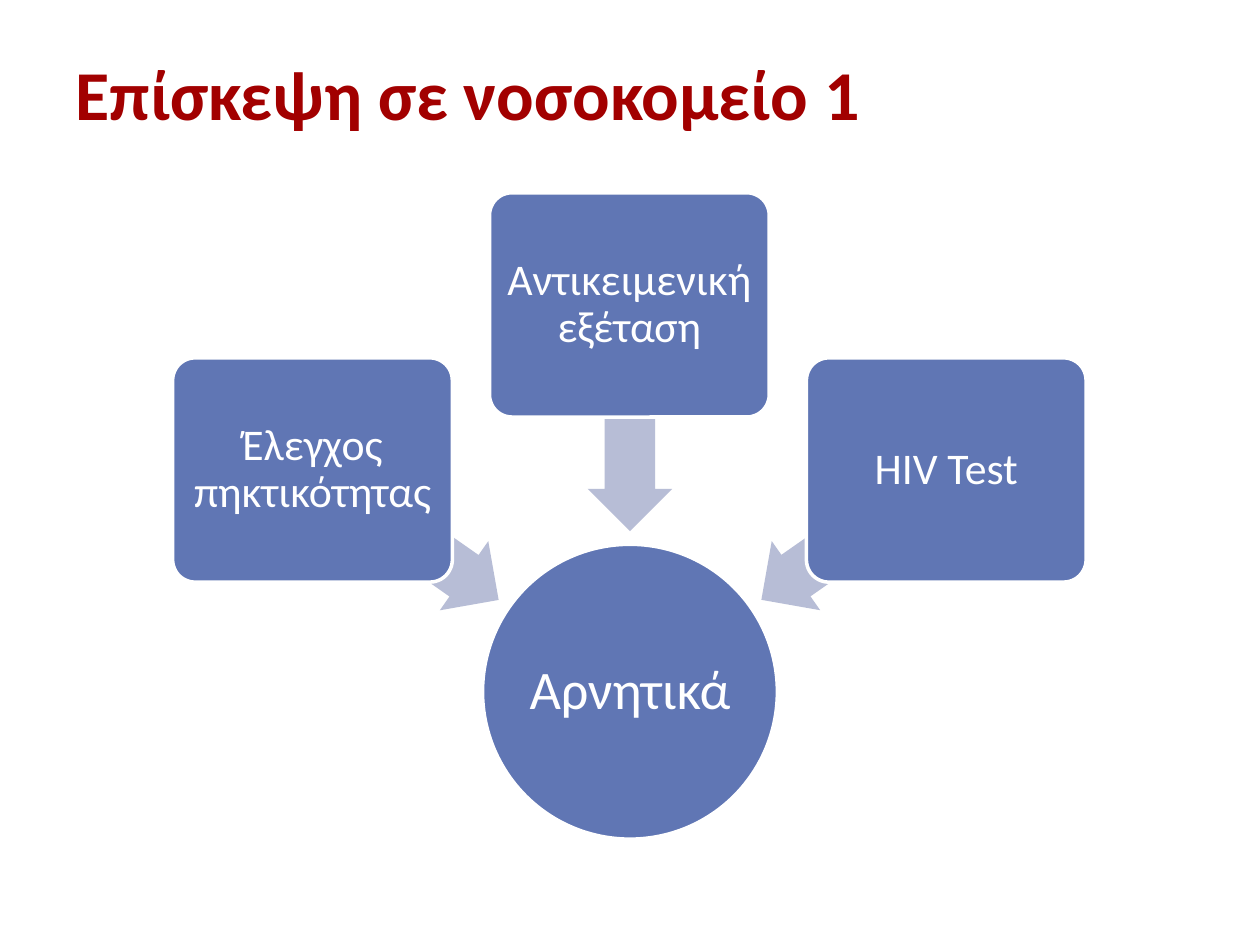
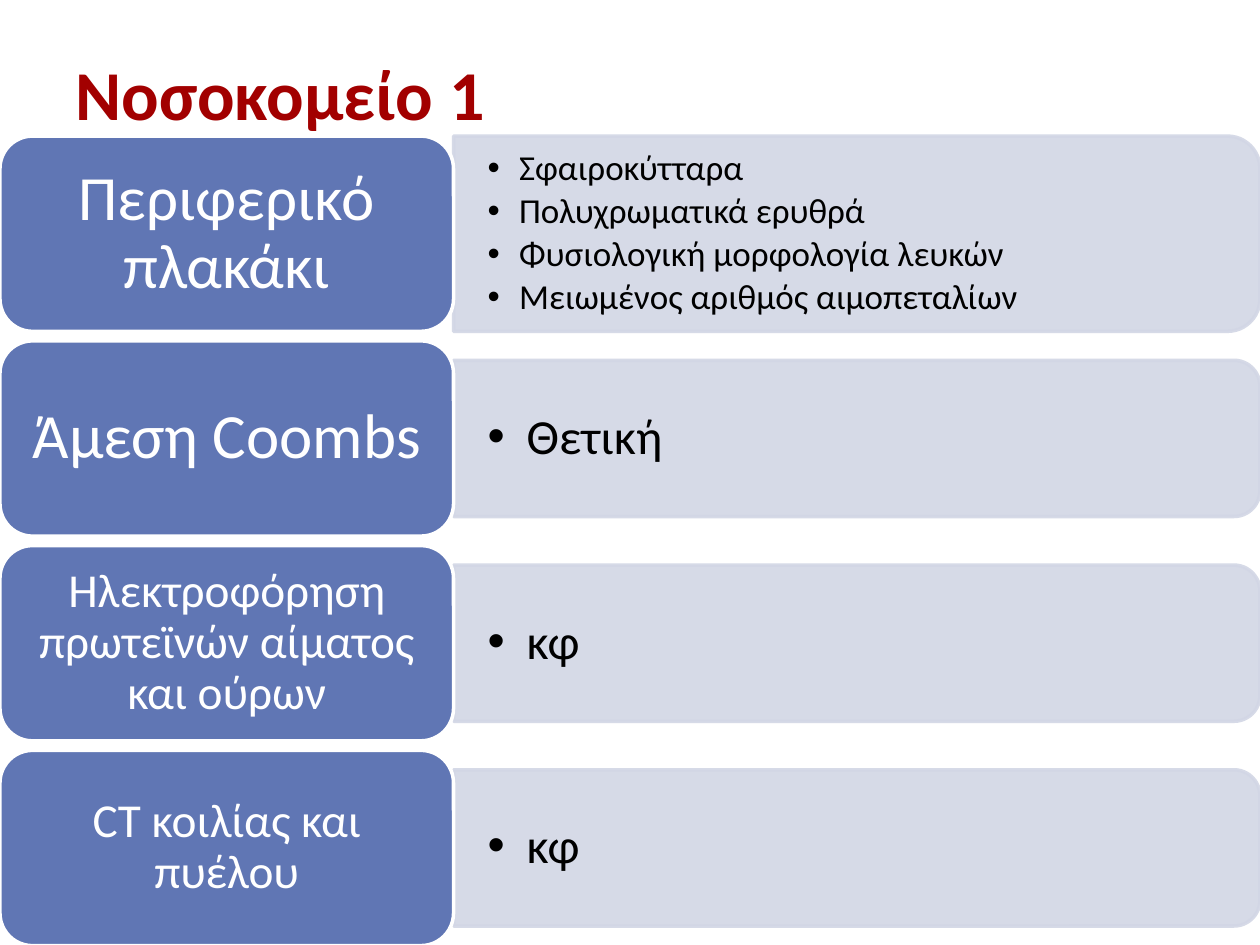
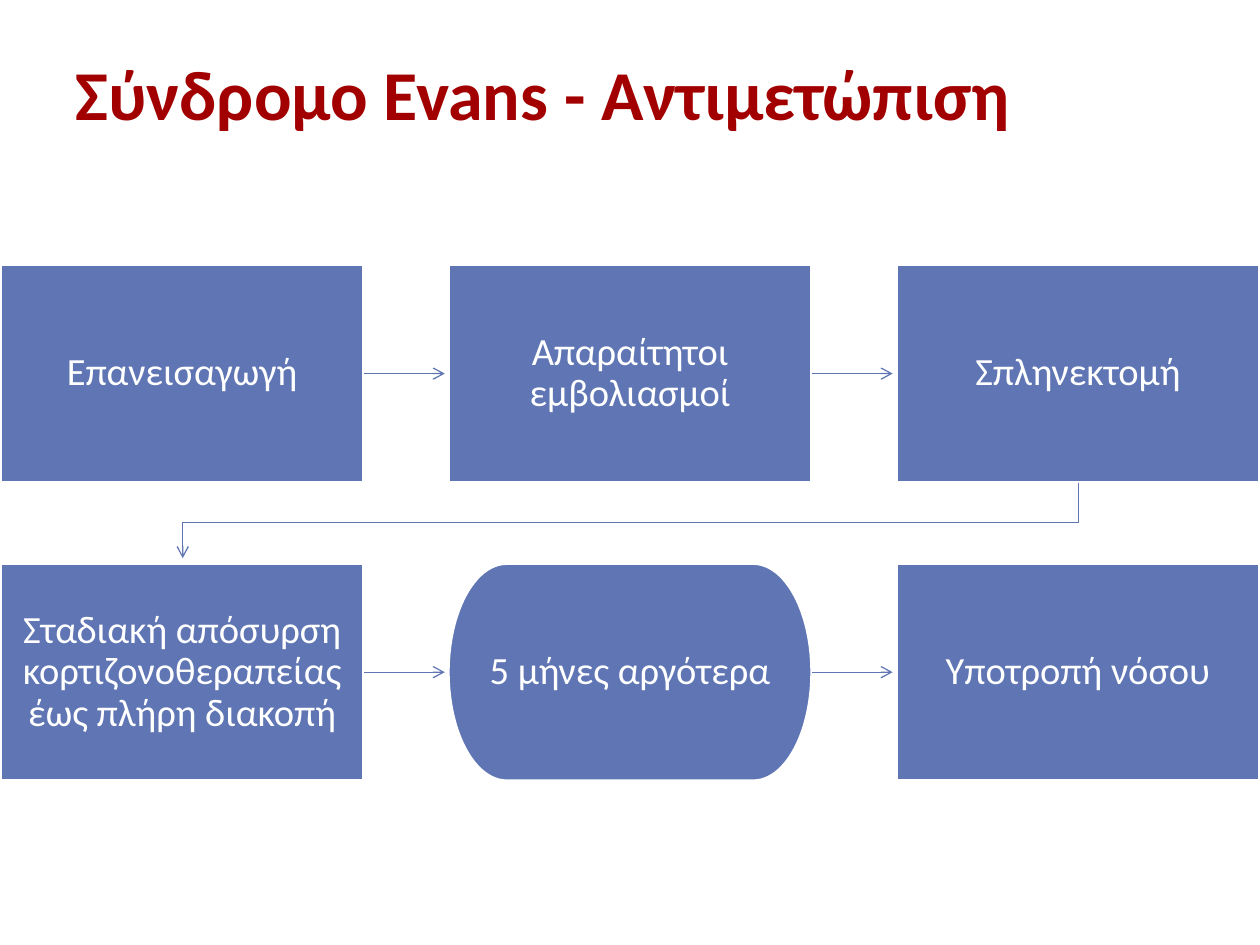
from lxml import etree
from pptx import Presentation
from pptx.dml.color import RGBColor
from pptx.enum.shapes import MSO_CONNECTOR, MSO_SHAPE
from pptx.enum.text import MSO_ANCHOR, MSO_AUTO_SIZE, PP_ALIGN
from pptx.oxml.ns import qn
from pptx.util import Inches, Pt

RECTANGLE = MSO_SHAPE.RECTANGLE
ROUNDED = MSO_SHAPE.ROUNDED_RECTANGLE
TERMINATOR = MSO_SHAPE.FLOWCHART_TERMINATOR
OVAL = MSO_SHAPE.OVAL
LEFT_ARROW = MSO_SHAPE.LEFT_ARROW
TOP_ROUNDED = MSO_SHAPE.ROUND_2_SAME_RECTANGLE
STRAIGHT = MSO_CONNECTOR.STRAIGHT
MIDDLE = MSO_ANCHOR.MIDDLE
NO_AUTOFIT = MSO_AUTO_SIZE.NONE
LEFT, CENTER = PP_ALIGN.LEFT, PP_ALIGN.CENTER

THEME = {
    "node": RGBColor(0x60, 0x76, 0xB4),
    "arrow": RGBColor(0xB7, 0xBD, 0xD6),
    "panel": RGBColor(0xD2, 0xD6, 0xE5),
    "white": RGBColor(0xFF, 0xFF, 0xFF),
    "outline": Pt(2),
    "connector": Pt(0.75),
    "title": {"name": "Calibri", "size": Pt(40), "bold": True,
              "color": RGBColor(0xA2, 0x00, 0x00)},
    "label": {"name": "Calibri", "color": RGBColor(0xFF, 0xFF, 0xFF)},
    "list": {"name": "Calibri", "bold": False, "color": RGBColor(0, 0, 0)},
    "conclusion_size": 31, "test_size": 25, "step_size": 22,
}
TITLE_ONLY, FOUR_BODIES = 5, 4


def write_text(shape, lines, font_format, align, margins, indent=0):
    """Fill a shape or placeholder; an indent makes the lines bullets."""
    frame = shape.text_frame
    horizontal, vertical = (Inches(margin) for margin in margins)
    frame_format = {"word_wrap": True, "auto_size": NO_AUTOFIT, "vertical_anchor": MIDDLE,
                    "margin_left": horizontal, "margin_right": horizontal,
                    "margin_top": vertical, "margin_bottom": vertical}
    for name, value in frame_format.items():
        setattr(frame, name, value)
    frame.text = "\n".join(lines)
    for paragraph in frame.paragraphs:
        paragraph.alignment = align
        paragraph.line_spacing = 0.9
        paragraph.space_before = Pt(0)
        if indent:
            paragraph.space_after = Pt(3)
            properties = paragraph._p.get_or_add_pPr()
            properties.set("marL", str(Inches(indent)))
            properties.set("indent", str(-Inches(indent)))
            etree.SubElement(properties, qn("a:buChar"), char="•")
        for name, value in font_format.items():
            if name == "color":
                paragraph.font.color.rgb = value
            else:
                setattr(paragraph.font, name, value)


def add_block(slide, kind, box, fill, outline=None, adjustments=()):
    """Add a filled preset shape, outlined if a colour is given."""
    shape = slide.shapes.add_shape(kind, *(Inches(length) for length in box))
    shape.shadow.inherit = False
    shape.fill.solid()
    shape.fill.fore_color.rgb = fill
    if outline is None:
        shape.line.fill.background()
    else:
        shape.line.color.rgb = outline
        shape.line.width = THEME["outline"]
    for index, value in enumerate(adjustments):
        shape.adjustments[index] = value
    return shape


presentation = Presentation()
presentation.slide_width, presentation.slide_height = Inches(10), Inches(7.5)

# Slides and their titles
slides = []
for title_text, layout in [("Επίσκεψη σε νοσοκομείο 1", TITLE_ONLY),
                           ("Νοσοκομείο 1", FOUR_BODIES),
                           ("Σύνδρομο Evans - Αντιμετώπιση", TITLE_ONLY)]:
    slide = presentation.slides.add_slide(presentation.slide_layouts[layout])
    title = slide.shapes.title
    title.left, title.top = Inches(0.5), Inches(0.3)
    title.width, title.height = Inches(9), Inches(0.87)
    write_text(title, [title_text], THEME["title"], LEFT, (0.1, 0.05))
    title.text_frame.paragraphs[0].line_spacing = 1.0
    slides.append(slide)
visit_slide, results_slide, treatment_slide = slides

# Visit: three tests lead to one conclusion
conclusion = add_block(visit_slide, OVAL, (3.83, 4.32, 2.34, 2.34), THEME["node"], THEME["white"])
write_text(conclusion, ["Αρνητικά"], {**THEME["label"], "size": Pt(THEME["conclusion_size"])},
           CENTER, (0.02, 0.02))
tests = [("Έλεγχος πηκτικότητας", 2.84, 3.91),
         ("Αντικειμενική εξέταση", 1.53, 2.98),
         ("HIV Test", 2.84, 3.91)]
for index, (test, box_top, arrow_top) in enumerate(tests):
    arrow = add_block(visit_slide, LEFT_ARROW, (2.32 + 1.78 * index, arrow_top, 1.8, 0.67),
                      THEME["arrow"], adjustments=(0.6, 0.5))
    arrow.rotation = 215 + 55 * index
    box = add_block(visit_slide, ROUNDED, (1.37 + 2.515 * index, box_top, 2.22, 1.78),
                    THEME["node"], THEME["white"], (0.1,))
    write_text(box, [test], {**THEME["label"], "size": Pt(THEME["test_size"])},
               CENTER, (0.05, 0.05))

# Results: an examination on the left, its findings on the right
results = [
    ("Περιφερικό πλακάκι", 36, (0.15, 0.07),
     ["Σφαιροκύτταρα", "Πολυχρωματικά ερυθρά", "Φυσιολογική μορφολογία λευκών",
      "Μειωμένος αριθμός αιμοπεταλίων"], 20, 0.25, 1.55),
    ("Άμεση Coombs", 36, (0.15, 0.07), ["Θετική"], 28, 0.31, 1.24),
    ("Ηλεκτροφόρηση πρωτεϊνών αίματος και ούρων", 27, (0.11, 0.06), ["κφ"], 28, 0.31, 1.24),
    ("CT κοιλίας και πυέλου", 27, (0.11, 0.06), ["κφ"], 28, 0.31, 1.24),
]
card_width, card_height, panel_width = 3.6, 1.55, 6.4
for index, (examination, label_size, margins, findings, list_size, indent,
            panel_height) in enumerate(results):
    card_top = 1.08 + 1.625 * index
    middle = card_top + card_height / 2

    # The panel is turned so that its rounded corners face right
    panel = add_block(results_slide, TOP_ROUNDED,
                      (card_width + (panel_width - panel_height) / 2, middle - panel_width / 2,
                       panel_height, panel_width), THEME["panel"], THEME["panel"])
    panel.rotation = 90
    for color in panel.element.spPr.iter(qn("a:srgbClr")):
        etree.SubElement(color, qn("a:alpha"), val="90000")

    body = results_slide.placeholders[index + 1]
    body_height = panel_height - 0.14
    body.left, body.top = Inches(card_width), Inches(middle - body_height / 2)
    body.width, body.height = Inches(6.33), Inches(body_height)
    write_text(body, findings, {**THEME["list"], "size": Pt(list_size)}, LEFT,
               (0.27, 0.14), indent)
    results_slide.shapes.element.append(body.element)  # in front of its panel

    card = add_block(results_slide, ROUNDED, (0, card_top, card_width, card_height),
                     THEME["node"], THEME["white"])
    write_text(card, [examination], {**THEME["label"], "size": Pt(label_size)}, CENTER, margins)

# Treatment: six steps in two rows
steps = [("Επανεισαγωγή", RECTANGLE), ("Απαραίτητοι εμβολιασμοί", RECTANGLE),
         ("Σπληνεκτομή", RECTANGLE),
         ("Σταδιακή απόσυρση κορτιζονοθεραπείας έως πλήρη διακοπή", RECTANGLE),
         ("5 μήνες αργότερα", TERMINATOR), ("Υποτροπή νόσου", RECTANGLE)]
step_width, step_height = 2.89, 1.73
links = []
for index, (step, kind) in enumerate(steps):
    row, column = divmod(index, 3)
    left, top = 3.555 * column, 2.1 + 2.37 * row
    box = add_block(treatment_slide, kind, (left, top, step_width, step_height),
                    THEME["node"], THEME["white"])
    write_text(box, [step], {**THEME["label"], "size": Pt(THEME["step_size"])},
               CENTER, (0.17, 0.17))
    if column < 2:
        link_y = Inches(top + step_height / 2)
        links.append(treatment_slide.shapes.add_connector(
            STRAIGHT, Inches(left + step_width), link_y, Inches(left + 3.53), link_y))

# The last step of the first row turns back to the second row
turn = treatment_slide.shapes.build_freeform(Inches(8.56), Inches(3.83))
turn.add_line_segments([(Inches(x), Inches(y)) for x, y in
                        [(8.56, 4.15), (1.45, 4.15), (1.45, 4.43)]], close=False)
turn_link = turn.convert_to_shape()
turn_link.fill.background()
links.append(turn_link)
for link in links:
    link.line.color.rgb = THEME["node"]
    link.line.width = THEME["connector"]
    properties = link.element.spPr
    etree.SubElement(properties.find(qn("a:ln")), qn("a:tailEnd"), type="arrow")
    etree.SubElement(properties, qn("a:effectLst"))

presentation.save("out.pptx")
